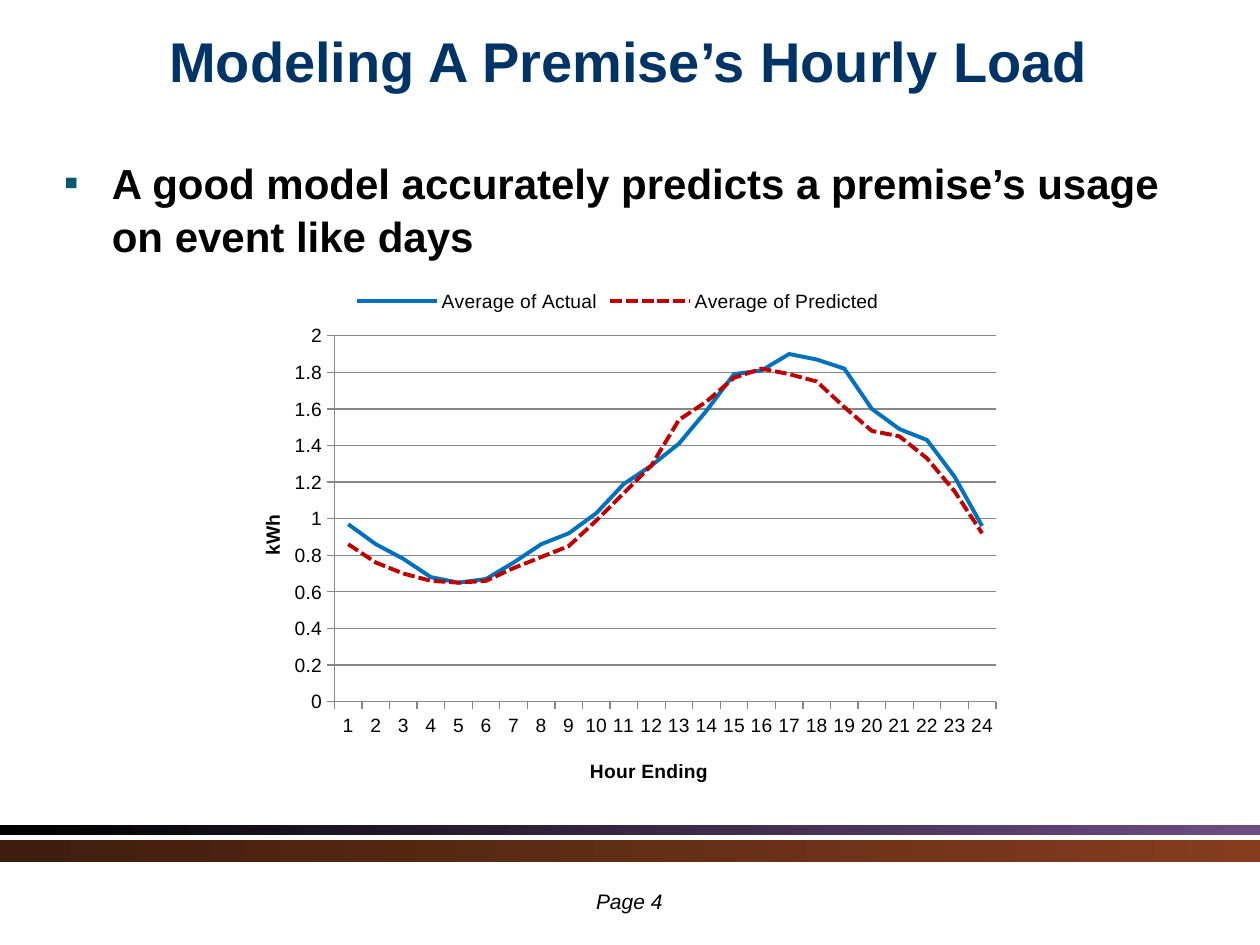
from dataclasses import dataclass

from lxml.etree import SubElement
from pptx import Presentation
from pptx.chart.data import CategoryChartData
from pptx.dml.color import RGBColor
from pptx.enum.chart import XL_CHART_TYPE, XL_LEGEND_POSITION, XL_TICK_MARK
from pptx.enum.dml import MSO_LINE
from pptx.enum.shapes import MSO_SHAPE
from pptx.enum.text import MSO_ANCHOR, PP_ALIGN
from pptx.oxml.ns import qn
from pptx.util import Inches, Pt

# Content
TITLE = "Modeling A Premise’s Hourly Load"
POINT = "A good model accurately predicts a premise’s usage on event like days"
PAGE = "Page 4"
HOUR_TITLE, LOAD_TITLE = "Hour Ending", "kWh"
HOURS = [str(hour) for hour in range(1, 25)]
ACTUAL = [0.97, 0.86, 0.78, 0.68, 0.65, 0.67, 0.76, 0.86, 0.92, 1.03, 1.19, 1.29,
          1.41, 1.59, 1.79, 1.81, 1.9, 1.87, 1.82, 1.6, 1.49, 1.43, 1.23, 0.96]
PREDICTED = [0.86, 0.76, 0.7, 0.66, 0.65, 0.66, 0.73, 0.79, 0.85, 0.99, 1.14, 1.29,
             1.54, 1.64, 1.77, 1.82, 1.79, 1.75, 1.61, 1.48, 1.45, 1.33, 1.15, 0.92]
LOADS = [  # name, values, colour, dash
    ("Average of Actual", ACTUAL, "0070C0", MSO_LINE.SOLID),
    ("Average of Predicted", PREDICTED, "C00000", MSO_LINE.SQUARE_DOT),
]
BANDS = [  # top, height, gradient ends
    (6.55, 0.08, ("000000", "6E4D85")),
    (6.67, 0.17, ("3E1D0E", "853D1E")),
]
WIDTH, HEIGHT = 10, 7.5


@dataclass(frozen=True)
class Theme:
    font: str = "Arial"
    navy: str = "003366"
    black: str = "000000"
    bullet: str = "00596F"
    grid: str = "878787"
    title: int = 32
    body: int = 24
    page: int = 12
    chart: int = 11


THEME = Theme()


def box(left, top, width, height):
    return [Inches(side) for side in (left, top, width, height)]


def style(font, size, color=THEME.black, bold=False, italic=False):
    font.name, font.size = THEME.font, Pt(size)
    font.bold, font.italic = bold, italic
    font.color.rgb = RGBColor.from_string(color)


def write(frame, text, size, align=PP_ALIGN.LEFT, anchor=MSO_ANCHOR.TOP,
          bullet=None, spacing=1.0, **look):
    frame.word_wrap = True
    frame.vertical_anchor = anchor
    paragraph = frame.paragraphs[0]
    paragraph.alignment = align
    paragraph.line_spacing = spacing
    if bullet:
        props = paragraph._p.get_or_add_pPr()
        props.set("marL", str(Inches(0.38)))
        props.set("indent", str(-Inches(0.38)))
        color = SubElement(props, qn("a:buClr"))
        SubElement(color, qn("a:srgbClr"), val=THEME.bullet)
        SubElement(props, qn("a:buFont"), typeface=THEME.font)
        SubElement(props, qn("a:buChar"), char=bullet)
    run = paragraph.add_run()
    run.text = text
    style(run.font, size, **look)


def place(element, after=None, inner=False, **shares):
    """Position a chart part by shares of the chart's size."""
    for old in element.findall(qn("c:layout")):
        element.remove(old)
    layout = SubElement(element, qn("c:layout"))
    element.insert(0 if after is None else element.index(element.find(qn(after))) + 1, layout)
    manual = SubElement(layout, qn("c:manualLayout"))
    if inner:
        SubElement(manual, qn("c:layoutTarget"), val="inner")
    for side in "xy":
        SubElement(manual, qn(f"c:{side}Mode"), val="edge")
    for side, share in shares.items():
        SubElement(manual, qn(f"c:{side}"), val=str(share))


def add_load_chart(slide):
    data = CategoryChartData(number_format="General")
    data.categories = HOURS
    for name, values, _, _ in LOADS:
        data.add_series(name, values)
    chart = slide.shapes.add_chart(
        XL_CHART_TYPE.LINE, *box(1.78, 2.16, 6.25, 4.21), data).chart
    style(chart.font, THEME.chart)
    chart.has_title = False

    # Lines
    plot = chart.plots[0]
    plot.vary_by_categories = False
    for series, (_, _, color, dash) in zip(plot.series, LOADS):
        series.smooth = False
        series.format.line.width = Pt(2.25)
        series.format.line.color.rgb = RGBColor.from_string(color)
        series.format.line.dash_style = dash

    # Axes
    load_axis = chart.value_axis
    load_axis.minimum_scale, load_axis.maximum_scale, load_axis.major_unit = 0, 2, 0.2
    load_axis.has_major_gridlines = True
    titles = [(chart.category_axis, HOUR_TITLE, 0.46, 0.91),
              (load_axis, LOAD_TITLE, 0.04, 0.45)]
    for axis, text, x, y in titles:
        axis.major_tick_mark = XL_TICK_MARK.OUTSIDE
        write(axis.axis_title.text_frame, text, THEME.chart, bold=True)
        place(axis.axis_title._element, after="c:tx", x=x, y=y)
    for ruled in (chart.category_axis, load_axis, load_axis.major_gridlines):
        ruled.format.line.width = Pt(0.75)
        ruled.format.line.color.rgb = RGBColor.from_string(THEME.grid)

    # Legend and plot area
    chart.has_legend = True
    chart.legend.position = XL_LEGEND_POSITION.TOP
    chart.legend.include_in_layout = False
    style(chart.legend.font, THEME.chart)
    place(chart.legend._element, after="c:legendPos", x=0.16, y=0.02, w=0.68, h=0.07)
    place(plot._element.getparent(), inner=True, x=0.14, y=0.12, w=0.84, h=0.69)


def main():
    deck = Presentation()
    deck.slide_width, deck.slide_height = Inches(WIDTH), Inches(HEIGHT)
    slide = deck.slides.add_slide(deck.slide_layouts[5])

    # Footer bands
    for top, height, ends in BANDS:
        band = slide.shapes.add_shape(MSO_SHAPE.RECTANGLE, *box(0, top, WIDTH, height))
        band.shadow.inherit = False
        band.line.fill.background()
        band.fill.gradient()
        band.fill.gradient_angle = 0
        for stop, color in zip(band.fill.gradient_stops, ends):
            stop.color.rgb = RGBColor.from_string(color)

    # Title, point and page number
    title = slide.shapes.title
    title.left, title.top, title.width, title.height = box(0.49, 0, 9, 0.95)
    write(title.text_frame, TITLE, THEME.title, align=PP_ALIGN.CENTER,
          anchor=MSO_ANCHOR.MIDDLE, color=THEME.navy, bold=True)
    point = slide.shapes.add_textbox(*box(0.41, 1.18, 9, 1.44))
    write(point.text_frame, POINT, THEME.body, bullet="▪", spacing=1.05, bold=True)
    page = slide.shapes.add_textbox(*box(3.93, 7, 2.13, 0.22))
    write(page.text_frame, PAGE, THEME.page, align=PP_ALIGN.CENTER, italic=True)

    add_load_chart(slide)
    deck.save("out.pptx")


if __name__ == "__main__":
    main()
